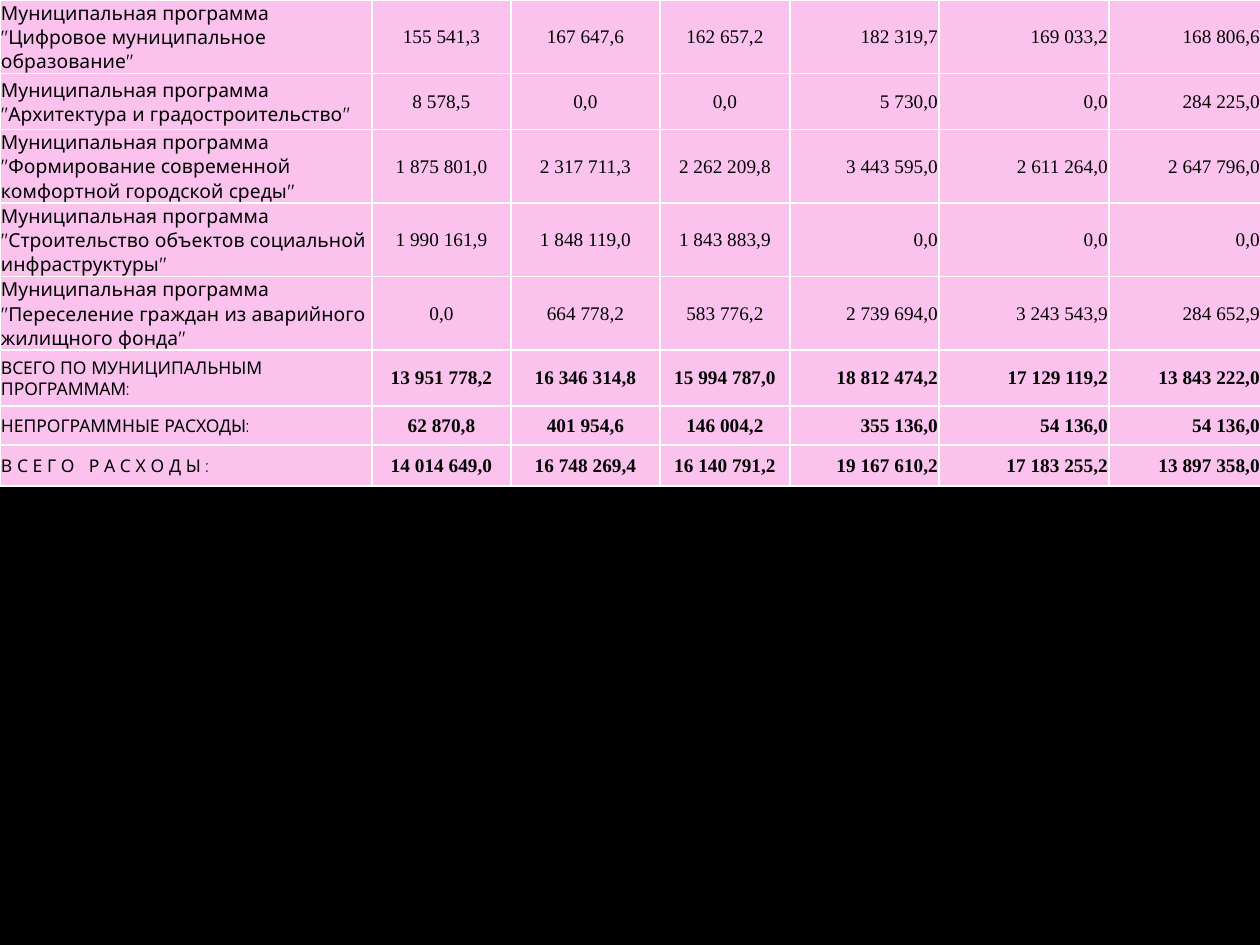
from lxml.etree import SubElement
from pptx import Presentation
from pptx.dml.color import RGBColor
from pptx.enum.text import MSO_ANCHOR, PP_ALIGN
from pptx.oxml.ns import qn
from pptx.util import Inches, Pt

PX = Inches(1) // 126
BLACK, WHITE, PINK = "000000", "FFFFFF", "FAC2ED"
NAME_FONT, AMOUNT_FONT = "Quicksand", "Times New Roman"
COLUMN_WIDTHS = [372, 139, 149, 130, 149, 170, 152]
ROW_HEIGHTS = [56] * 6 + [39, 41]
CENTRED_COLUMNS = 3

# Budget lines: name, then six amounts
PROGRAMMES = [
    ("Цифровое муниципальное образование",
     "155 541,3", "167 647,6", "162 657,2", "182 319,7", "169 033,2", "168 806,6"),
    ("Архитектура и градостроительство",
     "8 578,5", "0,0", "0,0", "5 730,0", "0,0", "284 225,0"),
    ("Формирование современной комфортной городской среды",
     "1 875 801,0", "2 317 711,3", "2 262 209,8",
     "3 443 595,0", "2 611 264,0", "2 647 796,0"),
    ("Строительство объектов социальной инфраструктуры",
     "1 990 161,9", "1 848 119,0", "1 843 883,9", "0,0", "0,0", "0,0"),
    ("Переселение граждан из аварийного жилищного фонда",
     "0,0", "664 778,2", "583 776,2", "2 739 694,0", "3 243 543,9", "284 652,9"),
]
TOTALS = [
    ("ВСЕГО ПО МУНИЦИПАЛЬНЫМ ПРОГРАММАМ:",
     "13 951 778,2", "16 346 314,8", "15 994 787,0",
     "18 812 474,2", "17 129 119,2", "13 843 222,0"),
    ("НЕПРОГРАММНЫЕ РАСХОДЫ:",
     "62 870,8", "401 954,6", "146 004,2", "355 136,0", "54 136,0", "54 136,0"),
    (" ".join("ВСЕГО РАСХОДЫ:"),
     "14 014 649,0", "16 748 269,4", "16 140 791,2",
     "19 167 610,2", "17 183 255,2", "13 897 358,0"),
]


def px(length):
    return length * PX


def color(value):
    return RGBColor.from_string(value)


def paint(fill, value):
    fill.solid()
    fill.fore_color.rgb = color(value)


def add_borders(cell):
    properties = cell._tc.get_or_add_tcPr()
    for position, side in enumerate(("a:lnL", "a:lnR", "a:lnT", "a:lnB")):
        border = SubElement(properties, qn(side), w=str(Pt(1)))
        properties.insert(position, border)
        line_fill = SubElement(border, qn("a:solidFill"))
        SubElement(line_fill, qn("a:srgbClr"), val=WHITE)


def fill_cell(cell, text, font_name, size, bold, align):
    cell.text = text
    cell.vertical_anchor = MSO_ANCHOR.MIDDLE
    cell.margin_left = cell.margin_right = cell.margin_top = px(1)
    cell.margin_bottom = 0
    paragraph = cell.text_frame.paragraphs[0]
    paragraph.alignment = align
    font = paragraph.font
    font.name, font.size, font.bold = font_name, Pt(size), bold
    font.color.rgb = color(BLACK)
    paint(cell.fill, PINK)
    add_borders(cell)


def fill_row(table, row, name, amounts, is_total):
    fill_cell(table.cell(row, 0), name, NAME_FONT, 10 if is_total else 11,
              False, PP_ALIGN.LEFT)
    for column, amount in enumerate(amounts, start=1):
        align = PP_ALIGN.CENTER if column <= CENTRED_COLUMNS else PP_ALIGN.RIGHT
        fill_cell(table.cell(row, column), amount, AMOUNT_FONT, 11, is_total, align)


def add_budget_table(slide):
    frame = slide.shapes.add_table(len(ROW_HEIGHTS), len(COLUMN_WIDTHS),
                                   0, 0, px(1260), px(472))
    table = frame.table
    table.first_row = table.horz_banding = False
    for column, width in zip(table.columns, COLUMN_WIDTHS):
        column.width = px(width)
    for row, height in zip(table.rows, ROW_HEIGHTS):
        row.height = px(height)
    frame.height = px(472)

    # Programmes first, then the totals in bold
    for row, (name, *amounts) in enumerate(PROGRAMMES):
        fill_row(table, row, f'Муниципальная программа "{name}"', amounts, False)
    for row, (name, *amounts) in enumerate(TOTALS, start=len(PROGRAMMES)):
        fill_row(table, row, name, amounts, True)


def main():
    deck = Presentation()
    deck.slide_width, deck.slide_height = px(1260), px(945)
    slide = deck.slides.add_slide(deck.slide_layouts[6])
    paint(slide.background.fill, BLACK)
    add_budget_table(slide)
    deck.save("out.pptx")


if __name__ == "__main__":
    main()
